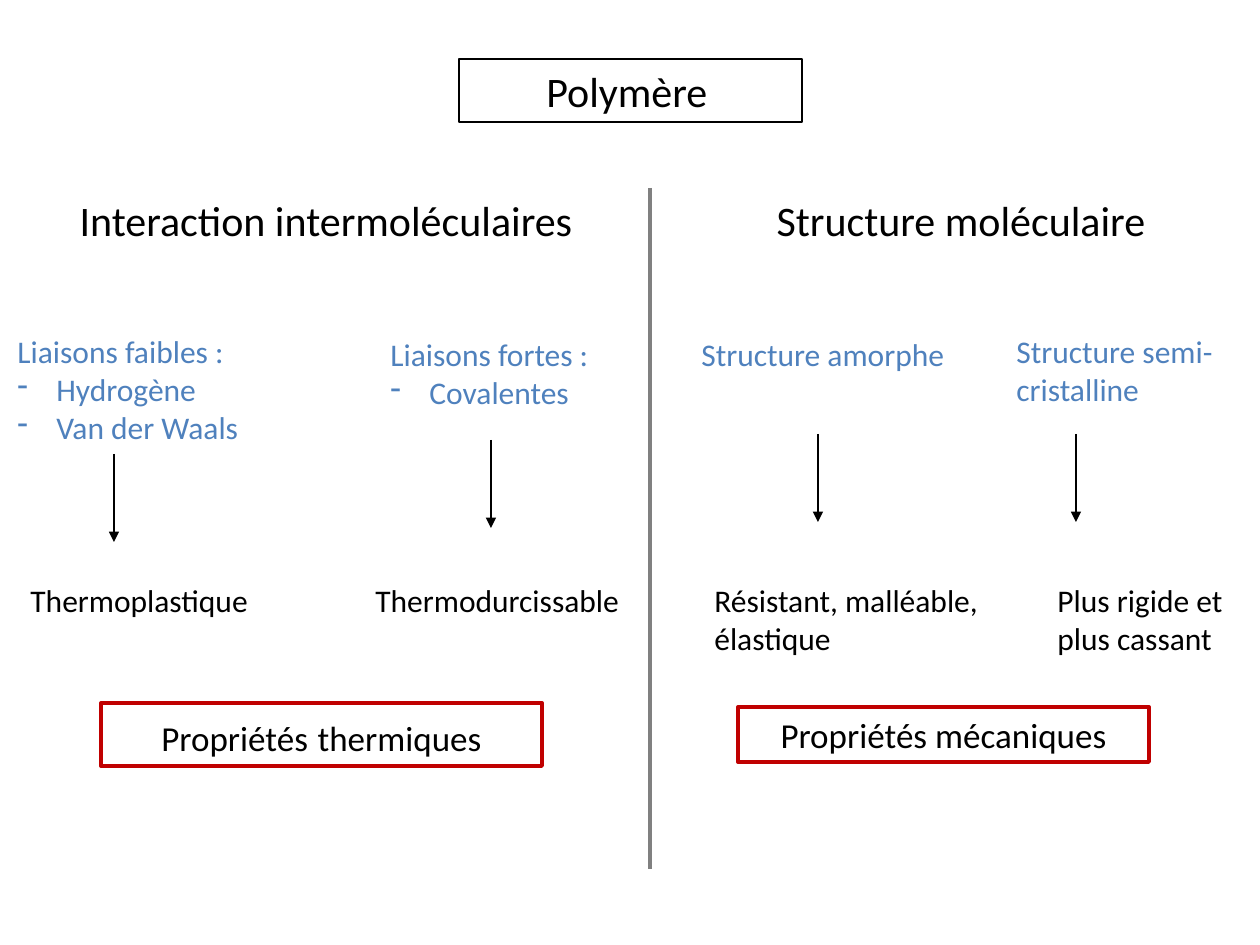
from lxml.etree import SubElement
from pptx import Presentation
from pptx.dml.color import RGBColor
from pptx.enum.shapes import MSO_CONNECTOR, MSO_SHAPE
from pptx.enum.text import MSO_ANCHOR, PP_ALIGN
from pptx.oxml.ns import qn
from pptx.util import Emu, Pt

COLORS = {"black": "000000", "blue": "4F81BD", "red": "C00000", "gray": "808080"}
FONT = "Calibri"
BULLET_INDENT = 39

FRAMES = [
    ((459, 59, 343, 63), [("Polymère", 24), (" ", 18)], "black", 0.75),
    ((101, 703, 441, 63), [("Propriétés", 20), (" ", 24), ("thermiques", 20)], "red", 2.25),
    ((738, 707, 411, 55), [("Propriétés mécaniques", 20)], "red", 2.25),
]
HEADINGS = [
    ((53, 188, 546, 63), "Interaction intermoléculaires"),
    ((688, 188, 546, 63), "Structure moléculaire"),
]
CAUSES = [
    ((5, 326, 357, 127), "Liaisons faibles :", ["Hydrogène", "Van der Waals"]),
    ((378, 329, 357, 89), "Liaisons fortes :", ["Covalentes"]),
    ((689, 329, 357, 51), "Structure amorphe", []),
    ((1004, 326, 281, 89), "Structure semi-cristalline", []),
]
EFFECTS = [
    ((18, 575, 246, 51), "Thermoplastique"),
    ((363, 575, 367, 51), "Thermodurcissable"),
    ((702, 575, 321, 89), "Résistant, malléable, élastique"),
    ((1045, 575, 218, 89), "Plus rigide et plus cassant"),
]
ARROW_STARTS = [(114, 454), (491, 440), (818, 434), (1076, 434)]
ARROW_LENGTH = 88
DIVIDER = (650, 188, 869)


def px(length):
    return Emu(round(length * 914400 / 126))


def rgb(name):
    return RGBColor.from_string(COLORS[name])


def style(font, size, color):
    font.name = FONT
    font.size = Pt(size)
    font.color.rgb = rgb(color)


def add_bullet(para):
    props = para._p.get_or_add_pPr()
    props.set("marL", str(px(BULLET_INDENT)))
    props.set("indent", str(-px(BULLET_INDENT)))
    SubElement(props, qn("a:buFontTx"))
    SubElement(props, qn("a:buChar"), char="-")


def add_text(page, area, text, size, color, bullets=(), align=PP_ALIGN.LEFT):
    frame = page.shapes.add_textbox(*map(px, area)).text_frame
    frame.word_wrap = True
    for index, line in enumerate([text, *bullets]):
        para = frame.add_paragraph() if index else frame.paragraphs[0]
        para.text = line
        para.alignment = align
        if index:
            add_bullet(para)
        style(para.font, size, color)


def add_frame(page, area, pieces, color, width):
    box = page.shapes.add_shape(MSO_SHAPE.RECTANGLE, *map(px, area))
    box.shadow.inherit = False
    box.fill.background()
    box.line.color.rgb = rgb(color)
    box.line.width = Pt(width)
    box.text_frame.word_wrap = True
    box.text_frame.vertical_anchor = MSO_ANCHOR.TOP
    para = box.text_frame.paragraphs[0]
    para.alignment = PP_ALIGN.CENTER
    for text, size in pieces:
        span = para.add_run()
        span.text = text
        style(span.font, size, "black")


def add_vertical(page, x, top, bottom, color, width, arrow=False):
    line = page.shapes.add_connector(MSO_CONNECTOR.STRAIGHT, px(x), px(top), px(x), px(bottom))
    line.line.color.rgb = rgb(color)
    line.line.width = Pt(width)
    if arrow:
        SubElement(line.line._get_or_add_ln(), qn("a:tailEnd"), type="triangle")
    SubElement(line._element.spPr, qn("a:effectLst"))


def main():
    deck = Presentation()
    deck.slide_width, deck.slide_height = px(1260), px(945)
    page = deck.slides.add_slide(deck.slide_layouts[6])
    for frame in FRAMES:
        add_frame(page, *frame)
    for area, text in HEADINGS:
        add_text(page, area, text, 24, "black", align=PP_ALIGN.CENTER)
    for area, text, bullets in CAUSES:
        add_text(page, area, text, 18, "blue", bullets)
    for area, text in EFFECTS:
        add_text(page, area, text, 18, "black")
    for x, top in ARROW_STARTS:
        add_vertical(page, x, top, top + ARROW_LENGTH, "black", 1.5, arrow=True)
    add_vertical(page, *DIVIDER, "gray", 2.25)
    deck.save("out.pptx")


if __name__ == "__main__":
    main()
